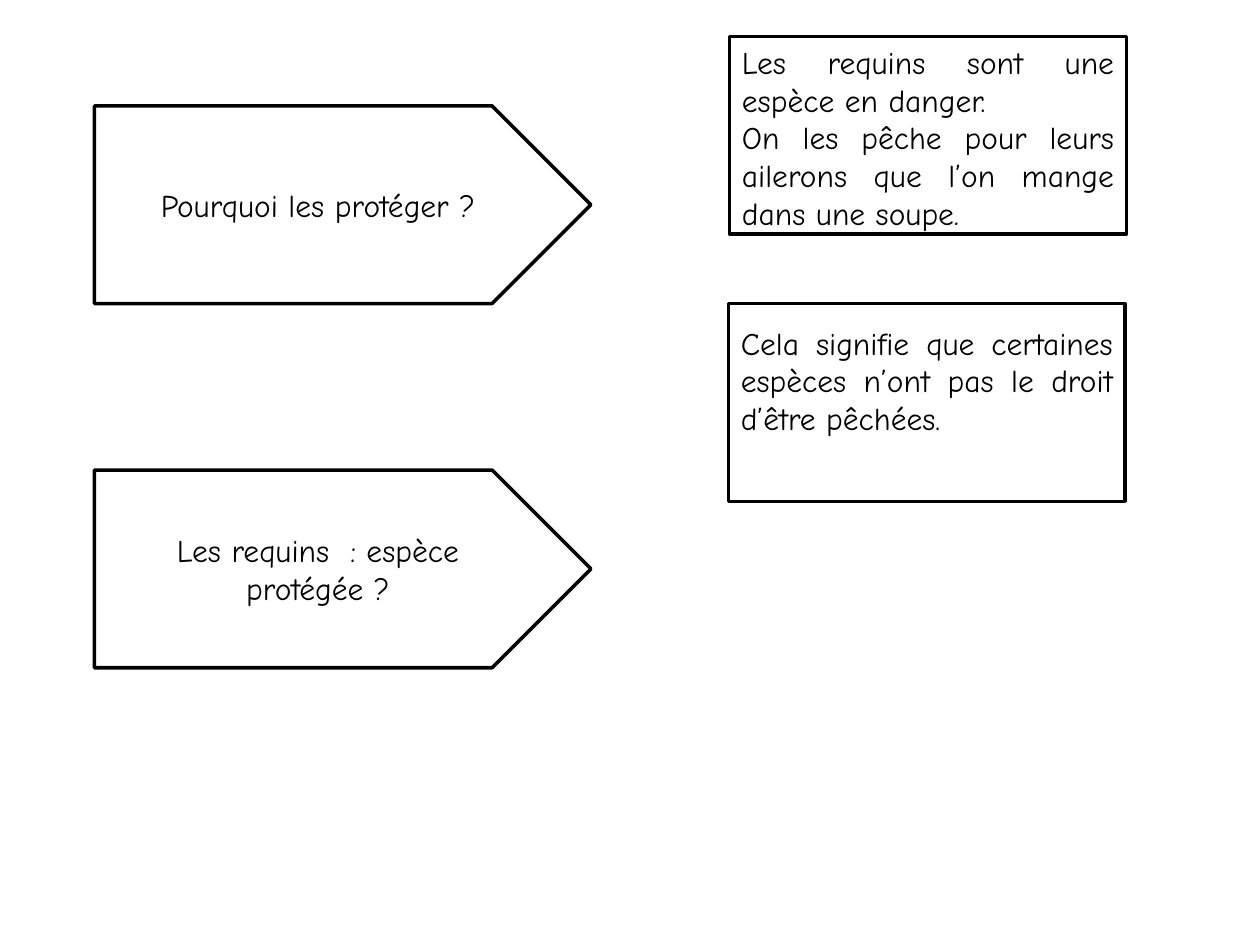
from pptx import Presentation
from pptx.dml.color import RGBColor as RGB
from pptx.enum.shapes import MSO_SHAPE as Kind
from pptx.enum.text import MSO_ANCHOR as Anchor, PP_ALIGN as Align
from pptx.util import Pt

COLORS = {"ink": "000000", "paper": "FFFFFF"}
FONT = "Comic Neue"
HIGH = 113
TAG_LEFT, TAG_WIDE = 54, 283.7
BOX_WIDE = 226.8

TAGS = [
    (60.5, "Pourquoi les protéger ?"),
    (268.6, "Les requins  : espèce protégée ?"),
]
# left, top, gap above the text, text height, lines
NOTES = [
    (416.9, 20.9, 0, 116.6, [
        "Les requins sont une espèce en danger.",
        "On les pêche pour leurs ailerons que l’on mange dans une soupe.",
    ]),
    (416.2, 173.5, 7.9, 94.3, [
        "Cela signifie que certaines espèces n’ont pas le droit d’être pêchées.",
    ]),
]


def color(name):
    return RGB.from_string(COLORS[name])


def write(frame, lines, align):
    frame.word_wrap = True
    frame.text = "\n".join(lines)
    for para in frame.paragraphs:
        para.alignment = align
        for run in para.runs:
            run.font.name = FONT
            run.font.size = Pt(18)
            run.font.color.rgb = color("ink")


def add_frame(slide, kind, left, top, wide):
    """Add an outlined, unfilled shape of the common height."""
    shape = slide.shapes.add_shape(kind, Pt(left), Pt(top), Pt(wide), Pt(HIGH))
    shape.shadow.inherit = False
    shape.fill.background()
    shape.line.color.rgb = color("ink")
    shape.line.width = Pt(2)
    return shape


def add_note(slide, left, top, gap, high, lines):
    """Add a box with justified text laid over it."""
    add_frame(slide, Kind.RECTANGLE, left, top, BOX_WIDE)
    text = slide.shapes.add_textbox(Pt(left), Pt(top + gap), Pt(BOX_WIDE), Pt(high))
    write(text.text_frame, lines, Align.JUSTIFY)


def add_tag(slide, top, title):
    """Add a pentagon arrow with a centred title."""
    tag = add_frame(slide, Kind.PENTAGON, TAG_LEFT, top, TAG_WIDE)
    tag.fill.solid()
    tag.fill.fore_color.rgb = color("paper")
    tag.text_frame.vertical_anchor = Anchor.MIDDLE
    write(tag.text_frame, [title], Align.CENTER)


def main():
    deck = Presentation()
    deck.slide_width, deck.slide_height = Pt(720), Pt(540)
    slide = deck.slides.add_slide(deck.slide_layouts[6])
    for note in NOTES:
        add_note(slide, *note)
    for tag in TAGS:
        add_tag(slide, *tag)
    deck.save("out.pptx")


if __name__ == "__main__":
    main()
